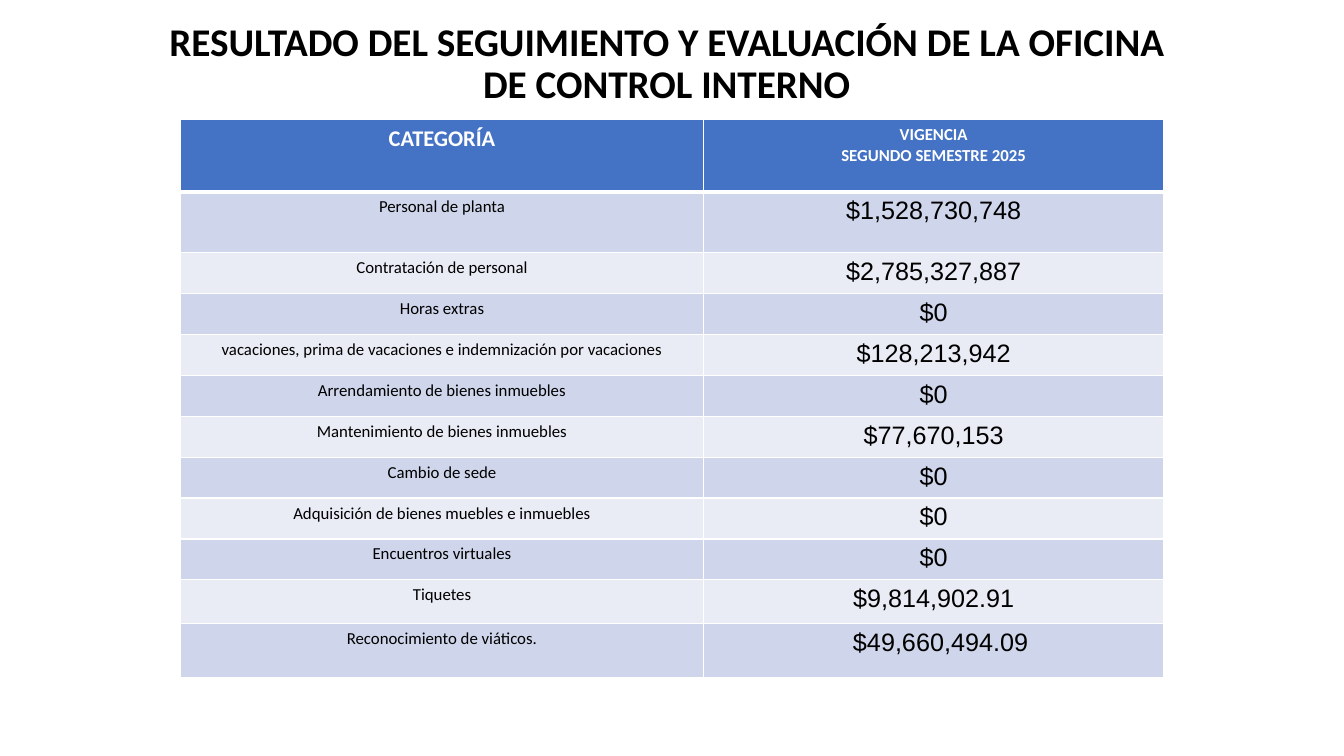
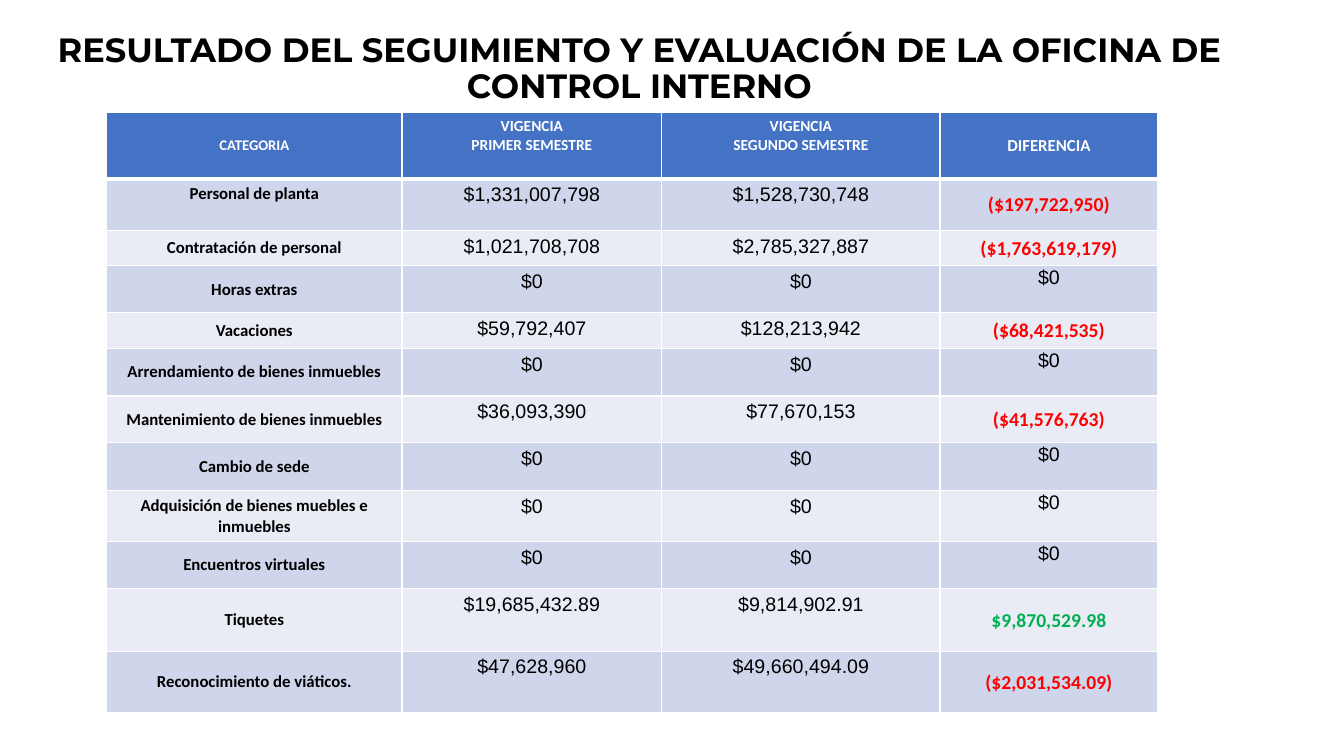
from dataclasses import dataclass

from lxml.etree import SubElement
from pptx import Presentation
from pptx.dml.color import RGBColor
from pptx.enum.text import MSO_ANCHOR, MSO_AUTO_SIZE, PP_ALIGN
from pptx.oxml.ns import qn
from pptx.util import Cm, Pt

# Colours
BLACK = RGBColor(0x00, 0x00, 0x00)
WHITE = RGBColor(0xFF, 0xFF, 0xFF)
HEADER_BLUE = RGBColor(0x44, 0x72, 0xC4)
BANDS = (RGBColor(0xCF, 0xD5, 0xEA), RGBColor(0xE9, 0xEB, 0xF5))
RED = RGBColor(0xFF, 0x00, 0x00)
GREEN = RGBColor(0x00, 0xB0, 0x50)

TITLE = "RESULTADO DEL SEGUIMIENTO Y EVALUACIÓN DE LA OFICINA DE CONTROL INTERNO"
TOP, MIDDLE = MSO_ANCHOR.TOP, MSO_ANCHOR.MIDDLE

# Category, first semester, second semester, difference
EXPENSES = [
    ("Personal de planta", "$1,331,007,798", "$1,528,730,748", "($197,722,950)"),
    ("Contratación de personal", "$1,021,708,708", "$2,785,327,887", "($1,763,619,179)"),
    ("Horas extras", "$0", "$0", "$0"),
    ("Vacaciones", "$59,792,407", "$128,213,942", "($68,421,535)"),
    ("Arrendamiento de bienes inmuebles", "$0", "$0", "$0"),
    ("Mantenimiento de bienes inmuebles", "$36,093,390", "$77,670,153", "($41,576,763)"),
    ("Cambio de sede", "$0", "$0", "$0"),
    ("Adquisición de bienes muebles e inmuebles", "$0", "$0", "$0"),
    ("Encuentros virtuales", "$0", "$0", "$0"),
    ("Tiquetes", "$19,685,432.89", "$9,814,902.91", "$9,870,529.98"),
    ("Reconocimiento de viáticos.", "$47,628,960", "$49,660,494.09", "($2,031,534.09)"),
]
LONG_NAMES = {"Vacaciones": "vacaciones, prima de vacaciones e indemnización por vacaciones"}


@dataclass
class Style:
    size: float
    font: str = "Calibri"
    color: RGBColor = BLACK
    bold: bool = False
    anchor: MSO_ANCHOR = TOP


def format_text(tf, style):
    for p in tf.paragraphs:
        p.alignment = PP_ALIGN.CENTER
        for r in p.runs:
            r.font.size = Pt(style.size)
            r.font.name = style.font
            r.font.bold = style.bold
            r.font.color.rgb = style.color


def add_titled_slide(prs, box, style):
    """Add a slide whose title fills box: left, top, width, height in cm."""
    s = prs.slides.add_slide(prs.slide_layouts[5])
    title = s.shapes.title
    title.left, title.top, title.width, title.height = map(Cm, box)
    tf = title.text_frame
    tf.text = TITLE
    tf.word_wrap = True
    tf.auto_size = MSO_AUTO_SIZE.NONE
    tf.vertical_anchor = style.anchor
    format_text(tf, style)
    tf.paragraphs[0].line_spacing = 0.9
    return s


def set_borders(cell, top=1, bottom=1):
    """Draw white cell borders, with widths in points."""
    tcPr = cell._tc.get_or_add_tcPr()
    widths = {"a:lnL": 1, "a:lnR": 1, "a:lnT": top, "a:lnB": bottom}
    for i, (tag, width) in enumerate(widths.items()):
        ln = SubElement(tcPr, qn(tag), w=str(Pt(width)))
        fill = SubElement(ln, qn("a:solidFill"))
        SubElement(fill, qn("a:srgbClr"), val=str(WHITE))
        tcPr.insert(i, ln)


def fill_cell(cell, text, style, fill):
    cell.text_frame.text = text
    cell.vertical_anchor = style.anchor
    cell.fill.solid()
    cell.fill.fore_color.rgb = fill
    format_text(cell.text_frame, style)


def add_banded_table(s, left, top, widths, heights, headers, rows, pick_style):
    """headers holds (text, style); pick_style(row, column, text) styles the body."""
    table = s.shapes.add_table(len(heights), len(widths), Cm(left), Cm(top),
                               Cm(sum(widths)), Cm(sum(heights))).table
    table.horz_banding = False
    for column, width in zip(table.columns, widths):
        column.width = Cm(width)
    for row, height in zip(table.rows, heights):
        row.height = Cm(height)
    for c, (text, style) in enumerate(headers):
        fill_cell(table.cell(0, c), text, style, HEADER_BLUE)
        set_borders(table.cell(0, c), bottom=3)
    for r, values in enumerate(rows):
        for c, text in enumerate(values):
            cell = table.cell(r + 1, c)
            fill_cell(cell, text, pick_style(r, c, text), BANDS[r % 2])
            set_borders(cell, top=3 if r == 0 else 1)
    return table


def header(size, anchor=TOP):
    return Style(size, color=WHITE, bold=True, anchor=anchor)


def semester_style(row, column, text):
    return Style(12) if column == 0 else Style(18, "Arial")


def comparison_style(row, column, text):
    if column == 0:
        return Style(12, bold=True, anchor=TOP if row == 0 else MIDDLE)
    if column < 3 or text == "$0":
        return Style(14, "Arial")
    return Style(14, color=RED if text.startswith("(") else GREEN, bold=True, anchor=MIDDLE)


def add_semester_slide(prs):
    s = add_titled_slide(prs, (3.96, 0.25, 25.68, 2.77), Style(28, bold=True, anchor=MIDDLE))
    table = add_banded_table(
        s, 4.55, 3.02,
        widths=[13.18, 11.6],
        heights=[1.81, 1.54] + [1.03] * 8 + [1.1, 1.37],
        headers=[("CATEGORÍA", header(16)),
                 ("VIGENCIA\nSEGUNDO SEMESTRE 2025", header(12))],
        rows=[(LONG_NAMES.get(name, name), second) for name, _, second, _ in EXPENSES],
        pick_style=semester_style)
    # The last amount sits slightly right of centre
    table.cell(len(EXPENSES), 1).margin_left = Cm(0.6)


def add_comparison_slide(prs):
    s = add_titled_slide(prs, (0.25, 0.69, 31.72, 2.13),
                         Style(24, "Montserrat", bold=True, anchor=MIDDLE))
    table = add_banded_table(
        s, 2.69, 2.82,
        widths=[7.44, 6.55, 7.01, 5.49],
        heights=[1.69, 1.29, 0.9, 1.18, 0.9, 1.2, 1.18, 1.2, 1.27, 1.18, 1.58, 1.56],
        headers=[("CATEGORIA", header(10.5, MIDDLE)),
                 ("VIGENCIA\nPRIMER SEMESTRE", header(11)),
                 ("VIGENCIA\nSEGUNDO SEMESTRE", header(11)),
                 ("DIFERENCIA", header(12, MIDDLE))],
        rows=EXPENSES,
        pick_style=comparison_style)
    # Differences use almost no cell margin
    for r in range(1, len(EXPENSES) + 1):
        cell = table.cell(r, 3)
        cell.margin_left = cell.margin_right = cell.margin_top = Cm(0.03)
        cell.margin_bottom = 0


def main():
    prs = Presentation()
    prs.slide_width, prs.slide_height = Cm(33.87), Cm(19.05)
    add_semester_slide(prs)
    add_comparison_slide(prs)
    prs.save("out.pptx")


if __name__ == "__main__":
    main()
